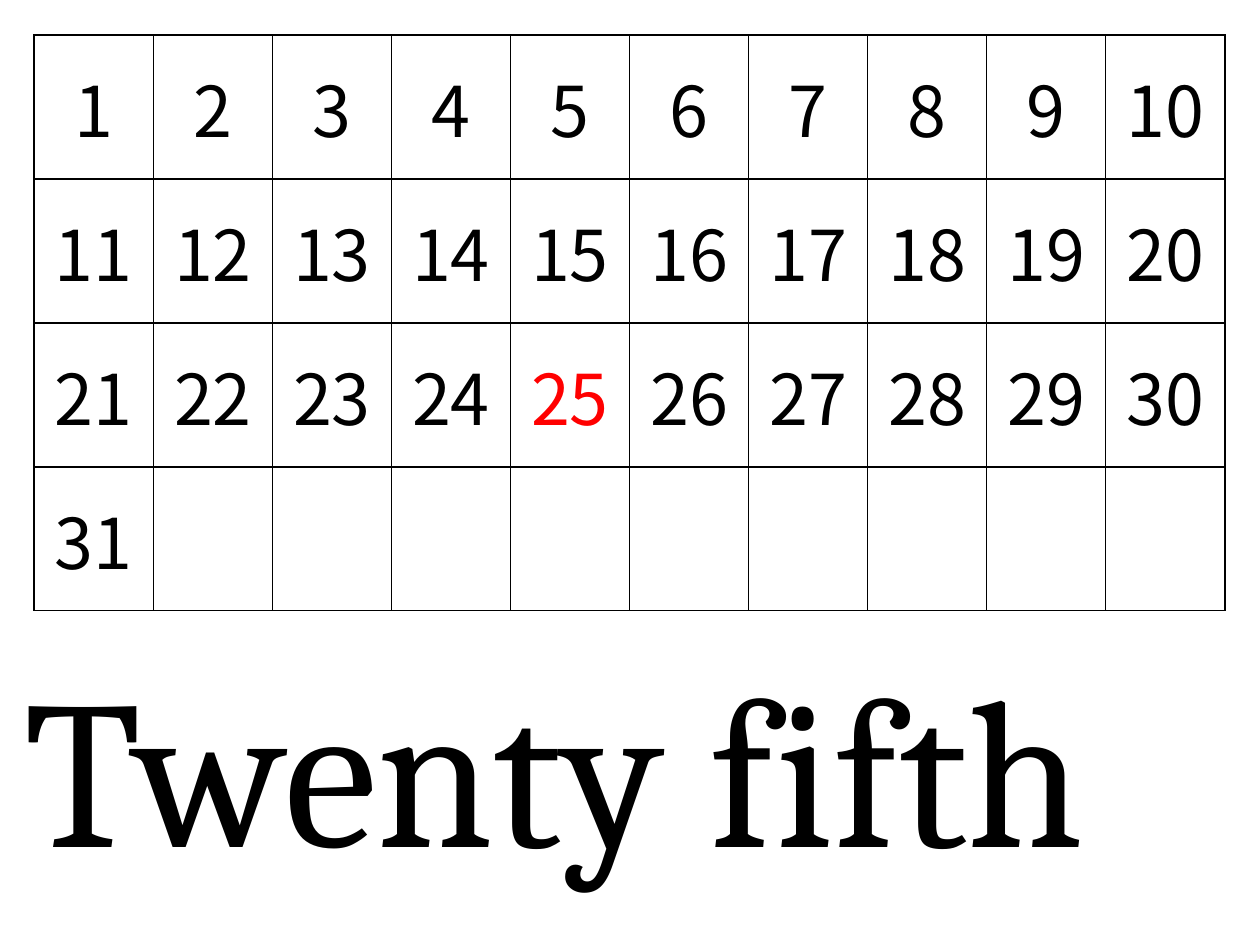
from lxml.etree import SubElement
from pptx import Presentation
from pptx.dml.color import RGBColor
from pptx.enum.text import MSO_ANCHOR, MSO_AUTO_SIZE, PP_ALIGN
from pptx.oxml.ns import qn
from pptx.util import Cm, Pt

COLORS = {"ink": "000000", "highlight": "FF0000"}
DAY_FONT, ORDINAL_FONT = "Noto Sans CJK JP", "Cambria"
ROWS, COLUMNS = 4, 10
LAST_DAY, CHOSEN_DAY = 31, 25


def style_font(paragraph, name, size, color):
    font = paragraph.font
    font.name = name
    font.size = Pt(size)
    font.color.rgb = RGBColor.from_string(COLORS[color])


def add_borders(cell):
    properties = cell._tc.get_or_add_tcPr()
    for side in ("lnL", "lnR", "lnT", "lnB"):
        border = SubElement(properties, qn(f"a:{side}"), w=str(Pt(1)))
        fill = SubElement(border, qn("a:solidFill"))
        SubElement(fill, qn("a:srgbClr"), val=COLORS["ink"])


def fill_day(cell, day):
    cell.vertical_anchor = MSO_ANCHOR.MIDDLE
    paragraph = cell.text_frame.paragraphs[0]
    paragraph.text = str(day)
    paragraph.alignment = PP_ALIGN.CENTER
    style_font(paragraph, DAY_FONT, 40,
               "highlight" if day == CHOSEN_DAY else "ink")


def add_calendar(slide):
    calendar = slide.shapes.add_table(
        ROWS, COLUMNS, Cm(0.69), Cm(0.71), Cm(24), Cm(11.6)).table
    calendar.first_row = calendar.horz_banding = False
    for day, cell in enumerate(calendar.iter_cells(), start=1):
        add_borders(cell)
        cell.fill.background()
        if day <= LAST_DAY:
            fill_day(cell, day)


def add_ordinal(slide, wording):
    ordinal = slide.shapes.add_textbox(
        Cm(0.25), Cm(12.73), Cm(25.04), Cm(5.38)).text_frame
    ordinal.word_wrap = False
    ordinal.auto_size = MSO_AUTO_SIZE.SHAPE_TO_FIT_TEXT
    paragraph = ordinal.paragraphs[0]
    paragraph.text = wording
    style_font(paragraph, ORDINAL_FONT, 120, "ink")


def main():
    presentation = Presentation()
    presentation.slide_width, presentation.slide_height = Cm(25.4), Cm(19.05)
    slide = presentation.slides.add_slide(presentation.slide_layouts[6])

    # Days of the month
    add_calendar(slide)

    # Chosen day in words
    add_ordinal(slide, "Twenty fifth")

    presentation.save("out.pptx")


if __name__ == "__main__":
    main()
